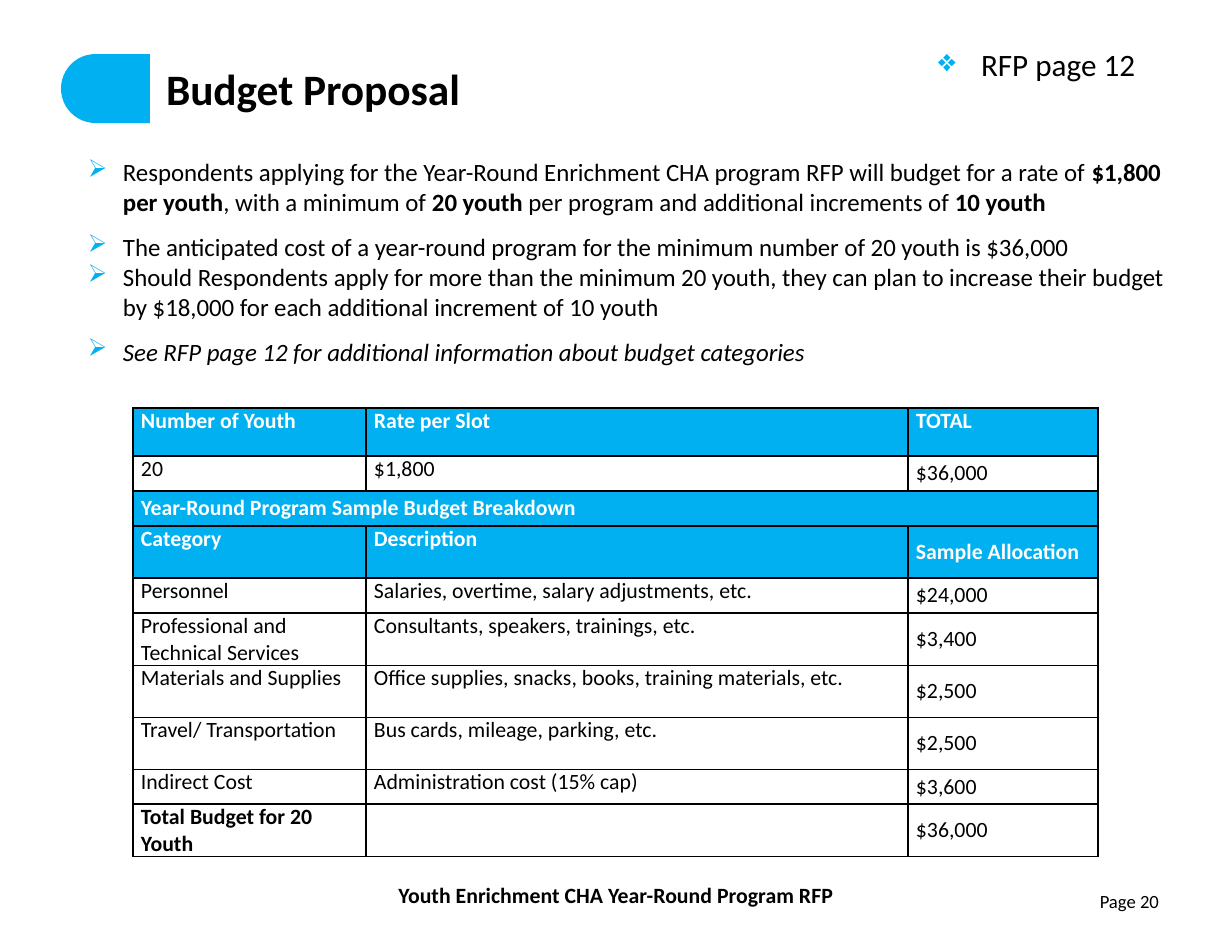
from lxml.etree import SubElement
from pptx import Presentation
from pptx.dml.color import RGBColor
from pptx.enum.shapes import MSO_SHAPE
from pptx.enum.text import MSO_ANCHOR, PP_ALIGN
from pptx.oxml.ns import qn
from pptx.util import Pt

EMU_PER_PX = 914400 / 112
COLORS = {"accent": "00B0F0", "paper": "FFFFFF", "ink": "000000"}
FONT = "Calibri"

BULLETS = [
    (1, [("Respondents applying for the Year-Round Enrichment CHA program RFP "
          "will budget for a rate of ", ""),
         ("$1,800 per youth", "b"), (", with a minimum of ", ""),
         ("20 youth ", "b"), ("per program and additional increments of ", ""),
         ("10 youth", "b")]),
    (1.5, [("The anticipated cost of a year-round program for the minimum "
            "number of 20 youth is $36,000", "")]),
    (1, [("Should Respondents apply for more than the minimum 20 youth, they can "
          "plan to increase their budget by $18,000 for each additional "
          "increment of 10 youth", "")]),
    (1.5, [("See RFP page 12 for additional information about budget categories", "i")]),
]

COLUMN_WIDTHS = [233, 542, 190]
HEADER_ROWS = {0, 2, 3}
SPANNED_ROW = 2
TOTAL_ROW = 9
# Row height, then the cells of the row
BUDGET = [
    (48, ["Number of Youth", "Rate per Slot", "TOTAL"]),
    (35, ["20", "$1,800", "$36,000"]),
    (35, ["Year-Round Program Sample Budget Breakdown"]),
    (52, ["Category", "Description", "Sample Allocation"]),
    (35, ["Personnel", "Salaries, overtime, salary adjustments, etc.", "$24,000"]),
    (52, ["Professional and Technical Services",
          "Consultants, speakers, trainings, etc.", "$3,400"]),
    (52, ["Materials and Supplies",
          "Office supplies, snacks, books, training materials, etc.", "$2,500"]),
    (52, ["Travel/ Transportation", "Bus cards, mileage, parking, etc.", "$2,500"]),
    (35, ["Indirect Cost", "Administration cost (15% cap)", "$3,600"]),
    (52, ["Total Budget for 20 Youth", "", "$36,000"]),
]


def px(length):
    return round(length * EMU_PER_PX)


def rgb(name):
    return RGBColor.from_string(COLORS[name])


class PageBuilder:
    def __init__(self, page):
        self.page = page

    def span(self, para, text, size, color="ink", style=""):
        """Add a run; style may hold b for bold and i for italic."""
        span = para.add_run()
        span.text = text
        font = span.font
        font.name, font.size, font.color.rgb = FONT, Pt(size), rgb(color)
        font.bold, font.italic = "b" in style, "i" in style

    def shape(self, kind, left, top, width, height, fill, line=None):
        shape = self.page.shapes.add_shape(kind, *map(px, (left, top, width, height)))
        shape.shadow.inherit = False
        shape.fill.solid()
        shape.fill.fore_color.rgb = rgb(fill)
        if line:
            shape.line.color.rgb = rgb(line)
            shape.line.width = Pt(2)
        else:
            shape.line.fill.background()
        return shape

    def text(self, left, top, width, height, anchor=MSO_ANCHOR.TOP):
        box = self.page.shapes.add_textbox(*map(px, (left, top, width, height)))
        frame = box.text_frame
        frame.word_wrap = True
        frame.vertical_anchor = anchor
        return frame

    def bullet(self, para, symbol, indent):
        properties = para._p.get_or_add_pPr()
        properties.set("marL", str(px(indent)))
        properties.set("indent", str(-px(indent)))
        color = SubElement(properties, qn("a:buClr"))
        SubElement(color, qn("a:srgbClr"), val=COLORS["accent"])
        SubElement(properties, qn("a:buChar"), char=symbol)

    def borders(self, cell):
        properties = cell._tc.get_or_add_tcPr()
        for side in ("lnL", "lnR", "lnT", "lnB"):
            line = SubElement(properties, qn(f"a:{side}"), w=str(Pt(1)))
            fill = SubElement(line, qn("a:solidFill"))
            SubElement(fill, qn("a:srgbClr"), val=COLORS["ink"])

    def cell(self, cell, text, header, bold, anchor):
        cell.margin_left = cell.margin_right = px(8)
        cell.margin_top = cell.margin_bottom = 0
        cell.vertical_anchor = anchor
        if header:
            cell.fill.solid()
            cell.fill.fore_color.rgb = rgb("accent")
        else:
            cell.fill.background()
        if text:
            self.span(cell.text_frame.paragraphs[0], text, 14,
                      "paper" if header else "ink", "b" if bold else "")

    def table(self, left, top):
        heights = [height for height, _ in BUDGET]
        table = self.page.shapes.add_table(
            len(BUDGET), len(COLUMN_WIDTHS), px(left), px(top),
            px(sum(COLUMN_WIDTHS)), px(sum(heights))).table
        table.first_row = table.horz_banding = False
        for column, width in zip(table.columns, COLUMN_WIDTHS):
            column.width = px(width)
        for row, height in zip(table.rows, heights):
            row.height = px(height)
        for cell in table.iter_cells():
            self.borders(cell)
        last = len(COLUMN_WIDTHS) - 1
        table.cell(SPANNED_ROW, 0).merge(table.cell(SPANNED_ROW, last))
        for r, (_, texts) in enumerate(BUDGET):
            header = r in HEADER_ROWS
            for c, text in enumerate(texts):
                middle = r == SPANNED_ROW or (c == last and r > 0)
                self.cell(table.cell(r, c), text, header,
                          header or (r == TOTAL_ROW and c == 0),
                          MSO_ANCHOR.MIDDLE if middle else MSO_ANCHOR.TOP)


def main():
    deck = Presentation()
    deck.slide_width, deck.slide_height = px(1232), px(952)
    builder = PageBuilder(deck.slides.add_slide(deck.slide_layouts[6]))

    tab = builder.shape(MSO_SHAPE.ROUNDED_RECTANGLE, 61, 54, 945, 69, "accent")
    tab.adjustments[0] = 0.5
    builder.shape(MSO_SHAPE.RECTANGLE, 152, 46, 859, 96, "paper", "paper")

    number = builder.text(883, 883, 288, 50)
    number.margin_left = number.margin_right = px(12)
    number.margin_top = number.margin_bottom = px(7)
    number.paragraphs[0].alignment = PP_ALIGN.RIGHT
    builder.span(number.paragraphs[0], "Page 20", 12)

    title = builder.text(155, 57, 1016, 62)
    builder.span(title.paragraphs[0], "Budget Proposal", 27.9, style="b")

    footer = builder.shape(MSO_SHAPE.RECTANGLE, 205, 859, 822, 72, "paper", "paper")
    footer.text_frame.vertical_anchor = MSO_ANCHOR.MIDDLE
    footer_para = footer.text_frame.paragraphs[0]
    footer_para.alignment = PP_ALIGN.CENTER
    builder.span(footer_para, "Youth Enrichment CHA Year-Round Program RFP", 14, style="b")

    reference = builder.text(927, 40, 320, 49).paragraphs[0]
    builder.bullet(reference, "❖", 43)
    builder.span(reference, "RFP page 12", 20)

    builder.table(133, 408)

    body = builder.text(77, 153, 1114, 217, MSO_ANCHOR.MIDDLE)
    for index, (spacing, spans) in enumerate(BULLETS):
        para = body.add_paragraph() if index else body.paragraphs[0]
        builder.bullet(para, "➢", 35)
        para.line_spacing = float(spacing)
        for text, style in spans:
            builder.span(para, text, 16, style=style)

    deck.save("out.pptx")


if __name__ == "__main__":
    main()
